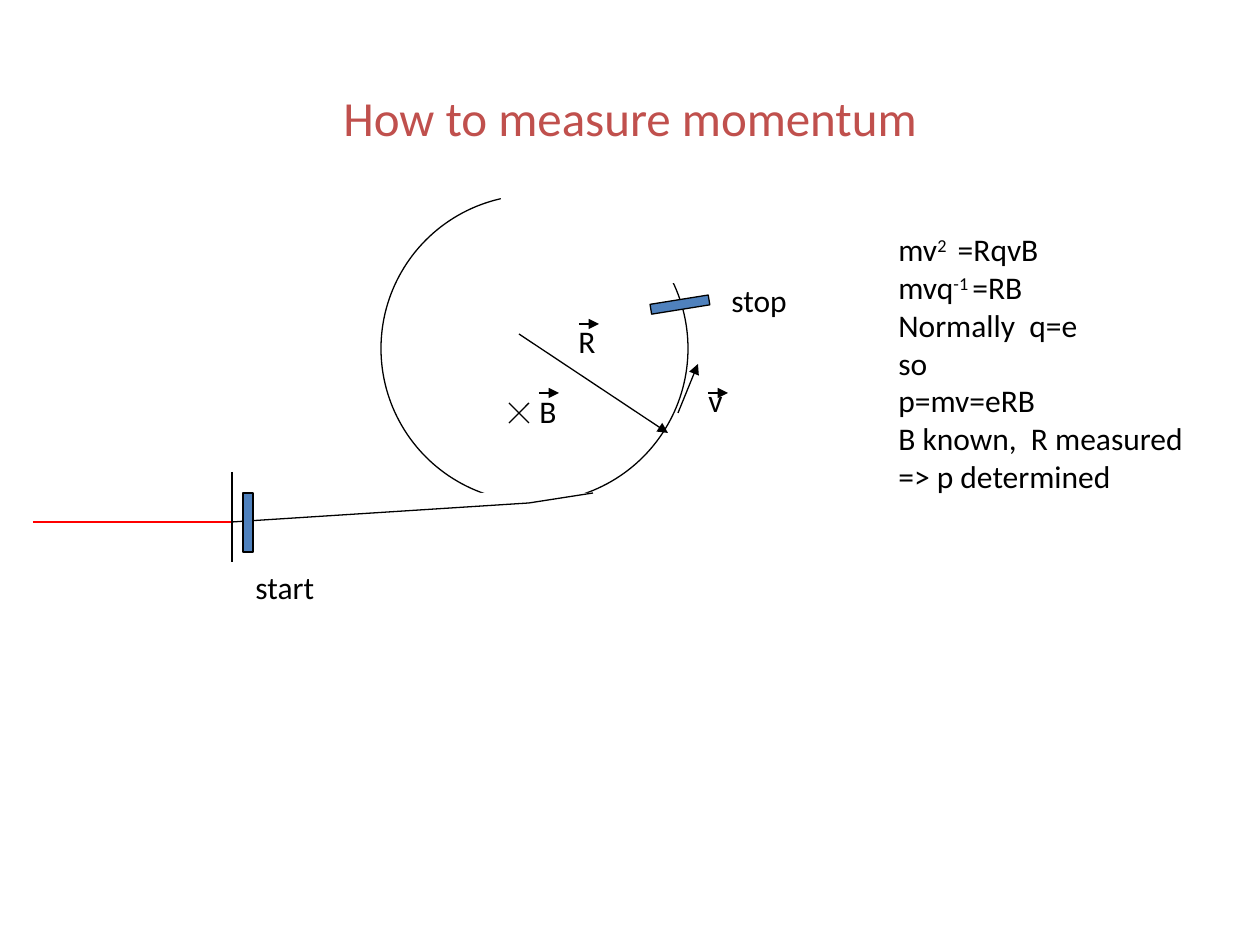
from typing import NamedTuple

from pptx import Presentation
from pptx.dml.color import RGBColor
from pptx.enum.shapes import MSO_CONNECTOR, MSO_SHAPE
from pptx.enum.text import MSO_ANCHOR, MSO_AUTO_SIZE, PP_ALIGN
from pptx.oxml.xmlchemy import OxmlElement
from pptx.util import Emu, Pt

STRAIGHT = MSO_CONNECTOR.STRAIGHT
RECTANGLE, OVAL = MSO_SHAPE.RECTANGLE, MSO_SHAPE.OVAL
TOP, MIDDLE = MSO_ANCHOR.TOP, MSO_ANCHOR.MIDDLE
LEFT, CENTER = PP_ALIGN.LEFT, PP_ALIGN.CENTER
FIT_SHAPE, NO_FIT = MSO_AUTO_SIZE.SHAPE_TO_FIT_TEXT, MSO_AUTO_SIZE.NONE

PIXELS_PER_INCH = 126
BLACK, WHITE, RED, BLUE, TITLE_RED = "000000", "FFFFFF", "FF0000", "4F81BD", "C0504D"
LINE_WIDTH = 0.75
VECTOR_ARROW_LENGTH = 20


class Box(NamedTuple):
    left: int
    top: int
    width: int
    height: int


class Line(NamedTuple):
    start: tuple[int, int]
    end: tuple[int, int]
    color: str = BLACK
    arrow: bool = False


class Label(NamedTuple):
    text: str
    box: Box


class Vector(NamedTuple):
    label: Label
    arrow_start: tuple[int, int]


class Span(NamedTuple):
    text: str
    superscript: bool = False


ORBIT = Box(381, 195, 307, 307)
ORBIT_MASKS = [Box(501, 165, 189, 118), Box(461, 493, 218, 110)]
START_DETECTOR = Box(243, 493, 10, 59)
STOP_DETECTOR = Box(675, 275, 10, 59)

LINES = [
    Line((33, 522), (232, 522), RED),               # incoming beam
    Line((232, 472), (232, 562)),                   # target
    Line((232, 522), (529, 503)),                   # outgoing track
    Line((529, 503), (593, 493)),                   # track joining the orbit
    Line((519, 334), (668, 433), arrow=True),       # radius
    Line((678, 413), (698, 364), arrow=True),       # velocity
    Line((529, 403), (509, 423)),                   # field cross
    Line((509, 403), (529, 423)),
]
LABELS = [
    Label("stop", Box(719, 275, 84, 50)),
    Label("start", Box(243, 562, 87, 50)),
]
VECTORS = [
    Vector(Label("R", Box(566, 316, 48, 50)), (579, 324)),
    Vector(Label("B", Box(527, 386, 47, 50)), (539, 393)),
    Vector(Label("v", Box(696, 375, 42, 50)), (708, 393)),
]
EQUATIONS = [
    [Span("mv"), Span("2 ", True), Span(" =RqvB")],
    [Span("mvq"), Span("-1 ", True), Span("=RB")],
    [Span("Normally  q=e")],
    [Span("so")],
    [Span("p=mv=eRB")],
    [Span("B known,  R measured")],
    [Span("=> p determined")],
]


def px(length: int) -> Emu:
    return Emu(round(length * 914400 / PIXELS_PER_INCH))


def rgb(color: str) -> RGBColor:
    return RGBColor.from_string(color)


def add_shape(slide, kind, box: Box, fill: str | None = None,
              line: str | None = None, rotation: float = 0) -> None:
    shape = slide.shapes.add_shape(kind, *map(px, box))
    shape.shadow.inherit = False
    shape.rotation = rotation
    if fill:
        shape.fill.solid()
        shape.fill.fore_color.rgb = rgb(fill)
    else:
        shape.fill.background()
    if line:
        shape.line.color.rgb = rgb(line)
        shape.line.width = Pt(LINE_WIDTH)
    else:
        shape.line.fill.background()


def add_line(slide, line: Line) -> None:
    connector = slide.shapes.add_connector(STRAIGHT, *map(px, line.start + line.end))
    connector.line.color.rgb = rgb(line.color)
    connector.line.width = Pt(LINE_WIDTH)
    if line.arrow:
        arrowhead = OxmlElement("a:tailEnd")
        arrowhead.set("type", "triangle")
        connector.line._get_or_add_ln().append(arrowhead)
    connector._element.spPr.append(OxmlElement("a:effectLst"))


def add_text(slide, box: Box, paragraphs: list[list[Span]], *, size: int = 18,
             color: str = BLACK, align=LEFT, anchor=TOP, wrap: bool = False) -> None:
    frame = slide.shapes.add_textbox(*map(px, box)).text_frame
    frame.word_wrap = wrap
    frame.auto_size = NO_FIT if wrap else FIT_SHAPE
    frame.vertical_anchor = anchor
    for index, spans in enumerate(paragraphs):
        paragraph = frame.add_paragraph() if index else frame.paragraphs[0]
        paragraph.alignment = align
        for span in spans:
            run = paragraph.add_run()
            run.text = span.text
            run.font.name = "Calibri"
            run.font.size = Pt(size)
            run.font.color.rgb = rgb(color)
            if span.superscript:
                run._r.get_or_add_rPr().set("baseline", "30000")


def add_label(slide, label: Label) -> None:
    add_text(slide, label.box, [[Span(label.text)]])


def add_vector(slide, vector: Vector) -> None:
    add_label(slide, vector.label)
    left, top = vector.arrow_start
    add_line(slide, Line((left, top), (left + VECTOR_ARROW_LENGTH, top), arrow=True))


def main() -> None:
    presentation = Presentation()
    presentation.slide_width = px(1260)
    presentation.slide_height = px(945)
    slide = presentation.slides.add_slide(presentation.slide_layouts[6])

    # Title and equations
    add_text(slide, Box(63, 38, 1134, 158), [[Span("How to measure momentum")]],
             size=28, color=TITLE_RED, align=CENTER, anchor=MIDDLE, wrap=True)
    add_text(slide, Box(886, 224, 312, 280), EQUATIONS)

    # Orbit, with two stretches covered in white
    add_shape(slide, OVAL, ORBIT, line=BLACK)
    for mask in ORBIT_MASKS:
        add_shape(slide, RECTANGLE, mask, fill=WHITE)

    # Tracks, detectors and labels
    for line in LINES:
        add_line(slide, line)
    add_shape(slide, RECTANGLE, START_DETECTOR, fill=BLUE, line=BLACK)
    add_shape(slide, RECTANGLE, STOP_DETECTOR, fill=BLUE, line=BLACK, rotation=260.9)
    for label in LABELS:
        add_label(slide, label)
    for vector in VECTORS:
        add_vector(slide, vector)

    presentation.save("out.pptx")


if __name__ == "__main__":
    main()
